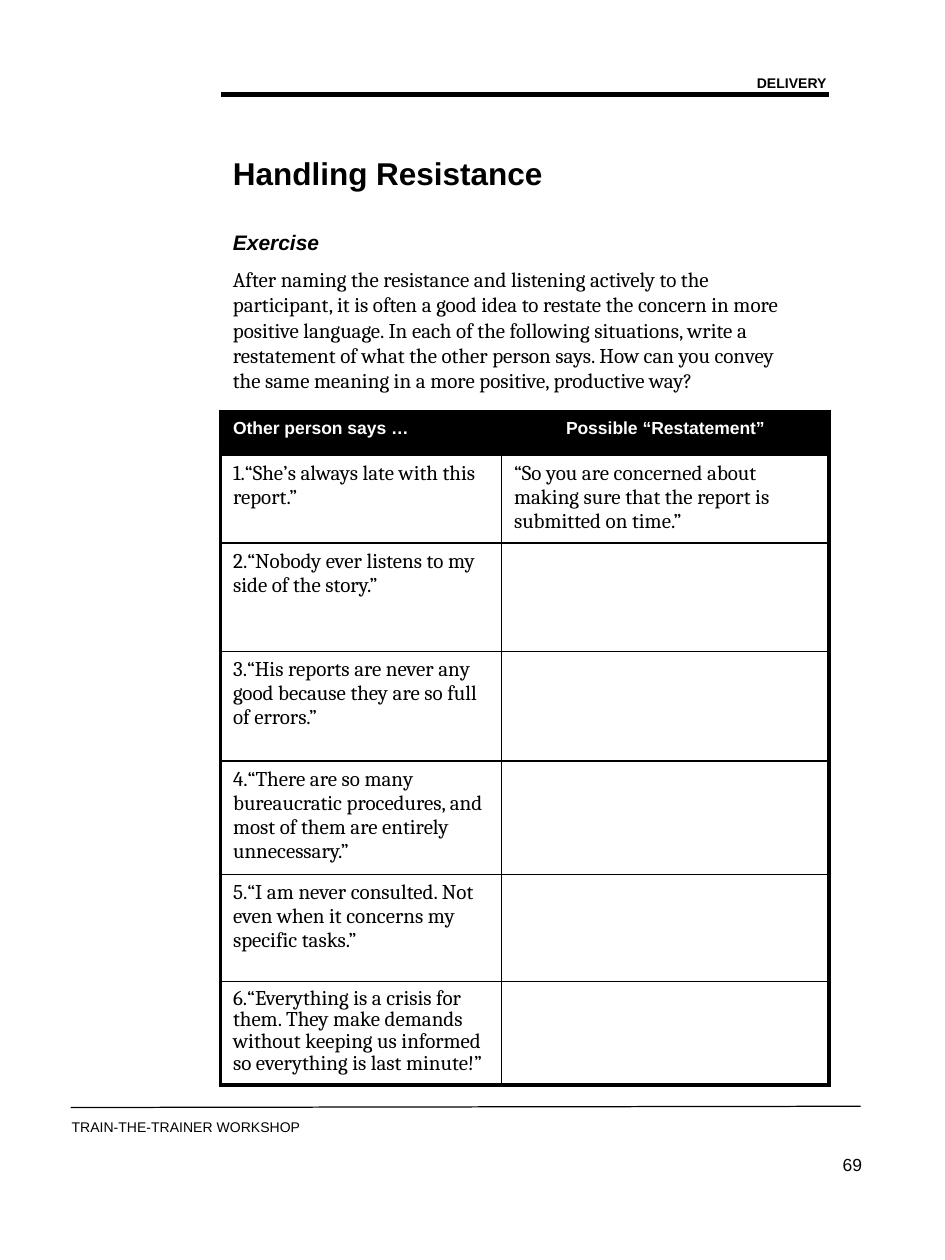
"""Build the Handling Resistance exercise page of a trainer workbook."""
from lxml.etree import SubElement
from pptx import Presentation
from pptx.dml.color import RGBColor
from pptx.enum.shapes import MSO_CONNECTOR as Connector
from pptx.enum.text import MSO_ANCHOR as Anchor, PP_ALIGN as Align
from pptx.oxml import parse_xml
from pptx.oxml.ns import nsdecls, qn
from pptx.util import Inches, Pt

BLACK, WHITE = "000000", "FFFFFF"
THICK, THIN = 2.25, 1
INTRO = (
    "After naming the resistance and listening actively to the participant, it is often "
    "a good idea to restate the concern in more positive language. In each of the following "
    "situations, write a restatement of what the other person says. How can you convey the "
    "same meaning in a more positive, productive way?"
)
HEADERS = [("Other person says …", Align.LEFT), ("Possible “Restatement”", Align.CENTER)]
STATEMENTS = [
    ("“She’s always late with this report.”",
     "“So you are concerned about making sure that the report is submitted on time.”"),
    ("“Nobody ever listens to my side of the story.”", ""),
    ("“His reports are never any good because they are so full of errors.”", ""),
    ("“There are so many bureaucratic procedures, and most of them are entirely unnecessary.”", ""),
    ("“I am never consulted. Not even when it concerns my specific tasks.”", ""),
    ("“Everything is a crisis for them. They make demands without keeping us informed "
     "so everything is last minute!”", ""),
]
COLUMN_WIDTHS = [2.23, 2.6]
ROW_HEIGHTS = [0.34, 0.7, 0.86, 0.87, 0.9, 0.85, 0.82]
LINES = [((0.56, 8.79), (6.83, 8.78), 0.7), ((1.75, 0.75), (6.58, 0.75), 3)]
TEXTS = [
    ((0.47, 8.83, 3.5, 0.23), Anchor.TOP, Align.LEFT,
     [("TRAIN-THE-TRAINER WORKSHOP", "Arial", 8, False, False)]),
    ((5.38, 9.11, 1.56, 0.67), Anchor.TOP, Align.RIGHT, [("69", "Arial", 10, False, False)]),
    ((1.75, 1.33, 4.58, 0.08), Anchor.MIDDLE, Align.LEFT,
     [("Handling Resistance", "Arial", 18, True, False)]),
    ((1.75, 1.77, 4.75, 1.4), Anchor.TOP, Align.LEFT,
     [("Exercise", "Arial", 12, True, True), (INTRO, "Cambria", 12, False, False)]),
    ((4.33, 0.54, 2.33, 0.23), Anchor.TOP, Align.RIGHT, [("DELIVERY", "Arial", 8, True, False)]),
]


def color(value):
    return RGBColor.from_string(value)


def add_run(paragraph, text, font_name, size, bold=False, italic=False, fill=BLACK):
    run = paragraph.add_run()
    run.text = text
    font = run.font
    font.name, font.size, font.bold, font.italic = font_name, Pt(size), bold, italic
    font.color.rgb = color(fill)


def add_text(slide, box, anchor, alignment, paragraphs):
    frame = slide.shapes.add_textbox(*map(Inches, box)).text_frame
    frame.word_wrap = True
    frame.vertical_anchor = anchor
    for index, content in enumerate(paragraphs):
        paragraph = frame.add_paragraph() if index else frame.paragraphs[0]
        paragraph.alignment = alignment
        if index:
            paragraph.space_before = Pt(7)
        add_run(paragraph, *content)


def add_line(slide, start, end, width):
    line = slide.shapes.add_connector(Connector.STRAIGHT, *map(Inches, start + end))
    line.line.color.rgb = color(BLACK)
    line.line.width = Pt(width)
    SubElement(line._element.spPr, qn("a:effectLst"))


def set_borders(cell, widths):
    properties = cell._tc.get_or_add_tcPr()
    for index, (side, width) in enumerate(zip("LRTB", widths)):
        properties.insert(index, parse_xml(
            f'<a:ln{side} {nsdecls("a")} w="{Pt(width)}"><a:solidFill>'
            f'<a:srgbClr val="{BLACK}"/></a:solidFill></a:ln{side}>'))


def set_number(paragraph, number):
    properties = paragraph._p.get_or_add_pPr()
    properties.set("marL", "0")
    properties.set("indent", "0")
    SubElement(properties, qn("a:buFont"), typeface="Arial")
    SubElement(properties, qn("a:buAutoNum"), type="arabicPeriod", startAt=str(number))


def add_exercise_table(slide):
    rows, columns = len(ROW_HEIGHTS), len(COLUMN_WIDTHS)
    frame = slide.shapes.add_table(
        rows, columns, Inches(1.75), Inches(3.27),
        Inches(sum(COLUMN_WIDTHS)), Inches(sum(ROW_HEIGHTS)))
    table = frame.table
    table.first_row = table.horz_banding = False
    for column, width in zip(table.columns, COLUMN_WIDTHS):
        column.width = Inches(width)
    for row, height in zip(table.rows, ROW_HEIGHTS):
        row.height = Inches(height)
    for r in range(rows):
        for c in range(columns):
            cell = table.cell(r, c)
            paragraph = cell.text_frame.paragraphs[0]
            if r == 0:
                cell.fill.solid()
                cell.fill.fore_color.rgb = color(BLACK)
                text, paragraph.alignment = HEADERS[c]
                add_run(paragraph, text, "Arial", 10, bold=True, fill=WHITE)
            else:
                cell.fill.background()
                if r == rows - 1 and c == 0:
                    paragraph.line_spacing = 0.9
                if c == 0:
                    set_number(paragraph, r)
                if STATEMENTS[r - 1][c]:
                    add_run(paragraph, STATEMENTS[r - 1][c], "Cambria", 12)
            outer = (c == 0, c == columns - 1, r == 0, r == rows - 1)
            set_borders(cell, [THICK if edge else THIN for edge in outer])


def main():
    presentation = Presentation()
    presentation.slide_width, presentation.slide_height = Inches(7.5), Inches(10)
    slide = presentation.slides.add_slide(presentation.slide_layouts[6])
    for line in LINES:
        add_line(slide, *line)
    for text in TEXTS:
        add_text(slide, *text)
    add_exercise_table(slide)
    presentation.save("out.pptx")


if __name__ == "__main__":
    main()
